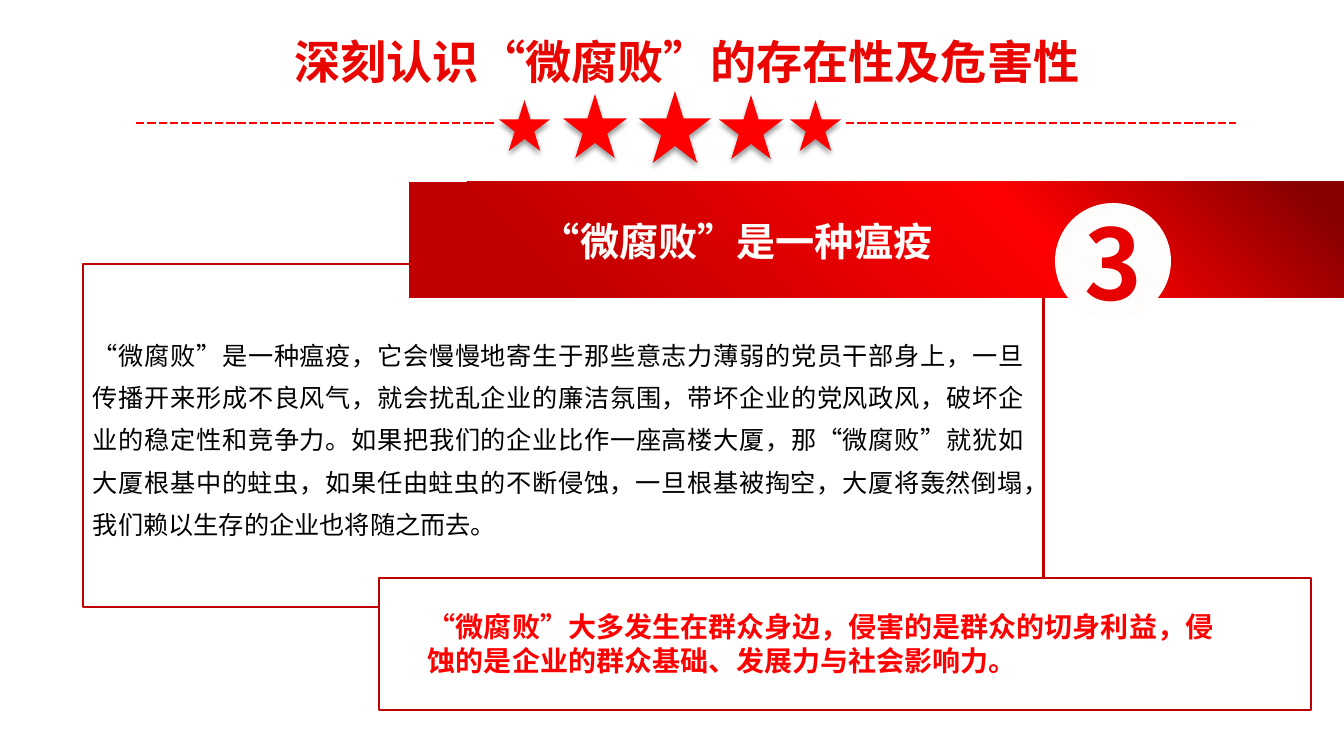
from copy import deepcopy

from lxml import etree
from pptx import Presentation
from pptx import util as u
from pptx.dml.color import RGBColor
from pptx.enum import dml, shapes, text
from pptx.oxml.ns import qn

COLORS = {
    "title": "EA0600", "red": "FF0000", "deep": "C00000", "dark": "8A0000",
    "digit": "E60000", "cream": "FFFDFB", "white": "FFFFFF", "black": "000000",
}
CJK = "Noto Sans CJK SC"
SCALE = 914400 / 100.8


def px(n):
    return u.Emu(round(n * SCALE))


def rgb(name):
    return RGBColor.from_string(COLORS[name])


class Deck:
    def __init__(self, wide, high):
        self.prs = Presentation()
        self.prs.slide_width, self.prs.slide_height = px(wide), px(high)
        self.slide = self.prs.slides.add_slide(self.prs.slide_layouts[6])

    def shape(self, kind, box, fill=None, line=None):
        item = self.slide.shapes.add_shape(kind, *map(px, box))
        item.shadow.inherit = False
        if fill:
            item.fill.solid()
            item.fill.fore_color.rgb = rgb(fill)
        else:
            item.fill.background()
        if line:
            item.line.color.rgb = rgb(line)
            item.line.width = u.Pt(2)
        else:
            item.line.fill.background()
        return item

    def star(self, left, top, size):
        item = self.shape(shapes.MSO_SHAPE.STAR_5_POINT, (left, top, size, size), "red")
        glow = item._element.spPr.find(qn("a:effectLst"))
        cast = etree.SubElement(glow, qn("a:outerShdw"), blurRad=str(u.Pt(4)),
                                dist=str(u.Pt(3)), dir="5400000", algn="t", rotWithShape="0")
        tint = etree.SubElement(cast, qn("a:srgbClr"), val=COLORS["black"])
        etree.SubElement(tint, qn("a:alpha"), val="40000")

    def dash(self, start, end, y):
        item = self.slide.shapes.add_connector(
            shapes.MSO_CONNECTOR.STRAIGHT, px(start), px(y), px(end), px(y))
        item.line.color.rgb = rgb("red")
        item.line.width = u.Pt(2)
        item.line.dash_style = dml.MSO_LINE.SQUARE_DOT
        etree.SubElement(item._element.spPr, qn("a:effectLst"))

    def band(self, box, stops, angle):
        item = self.shape(shapes.MSO_SHAPE.RECTANGLE, box)
        item.fill.gradient()
        item.fill.gradient_angle = angle
        ramp = item._element.spPr.find(qn("a:gradFill")).find(qn("a:gsLst"))
        while len(ramp) < len(stops):
            ramp.append(deepcopy(ramp[-1]))
        for stop, (place, color) in zip(item.fill.gradient_stops, stops):
            stop.position = place
            stop.color.rgb = rgb(color)

    def label(self, box, words, **style):
        item = self.slide.shapes.add_textbox(*map(px, box))
        self.words(item, words, **style)

    def words(self, item, words, size, color, font=CJK, bold=False, **para):
        frame = item.text_frame
        frame.word_wrap = True
        line = frame.paragraphs[0]
        for name, value in para.items():
            setattr(line, name, value)
        run = line.add_run()
        run.text = words
        for name, value in {"size": u.Pt(size), "bold": bold, "name": font}.items():
            setattr(run.font, name, value)
        run.font.color.rgb = rgb(color)
        etree.SubElement(run._r.get_or_add_rPr(), qn("a:ea"), typeface=CJK)
        return frame


def main():
    deck = Deck(1344, 756)
    rect = shapes.MSO_SHAPE.RECTANGLE
    mid = text.PP_ALIGN.CENTER

    # Title with star divider
    deck.label((270, 28, 834, 67), "深刻认识“微腐败”的存在性及危害性",
               size=33, color="title", bold=True, alignment=mid)
    for start, end in ((136, 496), (846, 1236)):
        deck.dash(start, end, 123)
    for star in ((639, 91, 72), (499, 100, 51), (563, 94, 64),
                 (719, 95, 64), (790, 100, 51)):
        deck.star(*star)

    # Frame and red heading band
    deck.shape(rect, (83, 264, 961, 343), line="deep")
    deck.band((409, 182, 935, 116), ((0.15, "deep"), (0.66, "red"), (0.95, "dark")), 45)
    deck.label((531, 212, 628, 57), "“微腐败”是一种瘟疫",
               size=28, color="cream", font="Arial", bold=True)

    # Number badge
    badge = deck.shape(shapes.MSO_SHAPE.OVAL, (1055, 203, 116, 116), "cream")
    frame = deck.words(badge, "3", size=70, color="digit", bold=True, alignment=mid)
    frame.vertical_anchor = text.MSO_ANCHOR.MIDDLE

    # Body text
    deck.label(
        (83, 323, 951, 220),
        "“微腐败”是一种瘟疫，它会慢慢地寄生于那些意志力薄弱的党员干部身上，"
        "一旦传播开来形成不良风气，就会扰乱企业的廉洁氛围，带坏企业的党风政风，"
        "破坏企业的稳定性和竞争力。如果把我们的企业比作一座高楼大厦，"
        "那“微腐败”就犹如大厦根基中的蛀虫，如果任由蛀虫的不断侵蚀，"
        "一旦根基被掏空，大厦将轰然倒塌，我们赖以生存的企业也将随之而去。",
        size=18, color="black", alignment=text.PP_ALIGN.JUSTIFY, line_spacing=1.4)

    # Closing remark
    deck.shape(rect, (379, 578, 932, 132), "white", "deep")
    deck.label(
        (418, 605, 830, 78),
        "“微腐败”大多发生在群众身边，侵害的是群众的切身利益，"
        "侵蚀的是企业的群众基础、发展力与社会影响力。",
        size=20, color="red", bold=True)

    deck.prs.save("out.pptx")


if __name__ == "__main__":
    main()
